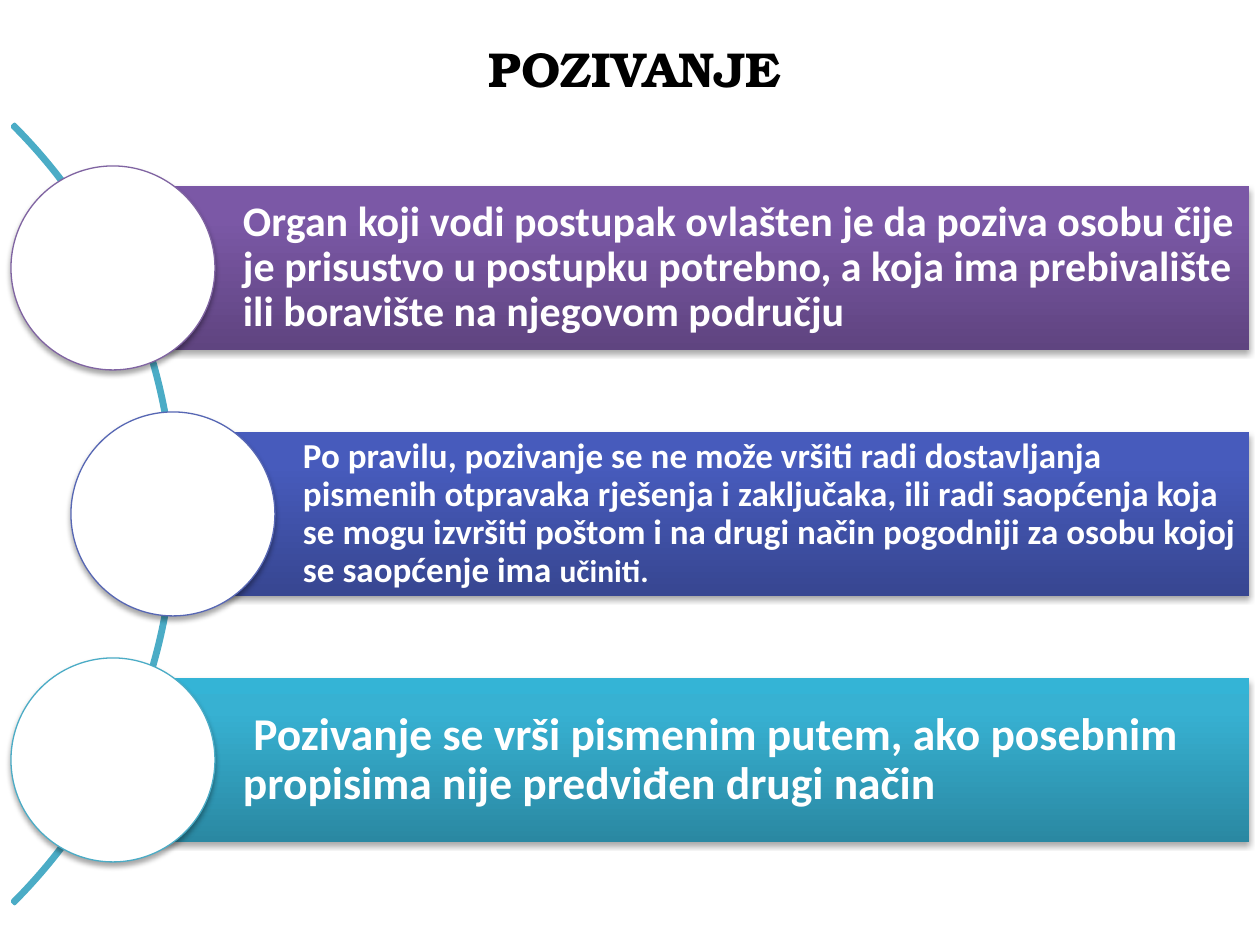
from dataclasses import dataclass

from lxml import etree
from pptx import Presentation
from pptx.dml.color import RGBColor
from pptx.enum.shapes import MSO_SHAPE
from pptx.enum.text import MSO_ANCHOR, PP_ALIGN
from pptx.oxml import parse_xml
from pptx.util import Emu, Pt

RECT, OVAL, BLOCK_ARC = MSO_SHAPE.RECTANGLE, MSO_SHAPE.OVAL, MSO_SHAPE.BLOCK_ARC
MIDDLE = MSO_ANCHOR.MIDDLE
LEFT, CENTER = PP_ALIGN.LEFT, PP_ALIGN.CENTER
NS = "http://schemas.openxmlformats.org/drawingml/2006/main"
EMU_PER_PX = 914400 / 126

SLIDE_W, SLIDE_H = 1260, 945
MID_Y, ROW_PITCH = 514, 246
BAR_RIGHT, BAR_H = 1249, 164
CIRCLE_D = 204
ARC_X, ARC_D = -926, 1102
TEXT_INDENT = 130


@dataclass(frozen=True)
class Theme:
    title_font: str = "TeX Gyre Bonum"
    body_font: str = "Calibri"
    title_size: int = 28
    black: str = "000000"
    white: str = "FFFFFF"
    arc: str = "4BACC6"
    # Gradient colours run from the bottom of a bar to its top.
    purple: tuple = ("5F4480", "7B58A6", "7C57A8")
    blue: tuple = ("374691", "475BBC", "455ABF")
    teal: tuple = ("2A88A2", "37B1D2", "34B4D6")
    outlines: tuple = ("8064A2", "5767B4", "4BACC6")


THEME = Theme()

# Centre x of the circle, bar gradient, outline, edge inset, (text, size) runs
ROWS = [
    (113, THEME.purple, THEME.outlines[0], 9, [
        ("Organ koji vodi postupak ovlašten je da poziva osobu čije je prisustvo "
         "u postupku potrebno, a koja ima prebivalište ili boravište na njegovom "
         "području", 24)]),
    (173, THEME.blue, THEME.outlines[1], 8, [
        ("Po pravilu, pozivanje se ne može vršiti radi dostavljanja pismenih "
         "otpravaka rješenja i zaključaka, ili radi saopćenja koja se mogu "
         "izvršiti poštom i na drugi način pogodniji za osobu kojoj se "
         "saopćenje ima ", 20),
        ("učiniti.", 18)]),
    (113, THEME.teal, THEME.outlines[2], 9, [
        (" Pozivanje se vrši pismenim putem, ako posebnim propisima nije "
         "predviđen drugi način", 26)]),
]


def px(n):
    return Emu(round(n * EMU_PER_PX))


def rgb(color):
    return RGBColor.from_string(color)


def write_text(s, runs, *, font, color, align=LEFT, spacing=1.0, insets=(0, 0, 0, 0)):
    """Fill s with one bold paragraph; insets are left, top, right, bottom in px."""
    tf = s.text_frame
    tf.word_wrap = True
    tf.vertical_anchor = MIDDLE
    tf.margin_left, tf.margin_top, tf.margin_right, tf.margin_bottom = map(px, insets)
    p = tf.paragraphs[0]
    p.alignment = align
    p.line_spacing = spacing
    for text, size in runs:
        r = p.add_run()
        r.text = text
        r.font.name = font
        r.font.size = Pt(size)
        r.font.bold = True
        r.font.color.rgb = rgb(color)


def add_shape(slide, kind, x, y, w, h, *, fill=None, line=None, line_width=0.75):
    s = slide.shapes.add_shape(kind, px(x), px(y), px(w), px(h))
    s.shadow.inherit = False
    if fill:
        s.fill.solid()
        s.fill.fore_color.rgb = rgb(fill)
    else:
        s.fill.background()
    if line:
        s.line.color.rgb = rgb(line)
        s.line.width = Pt(line_width)
    else:
        s.line.fill.background()
    return s


def set_gradient(s, colors):
    """Replace the empty fill of s with a vertical three-stop gradient."""
    stops = "".join(
        f'<a:gs pos="{pos * 1000}"><a:srgbClr val="{color}"/></a:gs>'
        for pos, color in zip((0, 80, 100), colors))
    grad = parse_xml(f'<a:gradFill xmlns:a="{NS}" rotWithShape="1"><a:gsLst>{stops}'
                     '</a:gsLst><a:lin ang="16200000" scaled="0"/></a:gradFill>')
    sp_pr = s._element.spPr
    sp_pr.replace(sp_pr.find(f"{{{NS}}}noFill"), grad)


def add_shadow(s):
    effects = s._element.spPr.find(f"{{{NS}}}effectLst")
    shadow = etree.SubElement(effects, f"{{{NS}}}outerShdw", blurRad=str(Pt(3.1)),
                              dist=str(Pt(1.8)), dir="5400000", rotWithShape="0")
    color = etree.SubElement(shadow, f"{{{NS}}}srgbClr", val=THEME.black)
    etree.SubElement(color, f"{{{NS}}}alpha", val="35000")


def add_title(slide, text):
    s = slide.shapes.add_textbox(px(63), px(10), px(1144), px(116))
    write_text(s, [(text, THEME.title_size)], font=THEME.title_font,
               color=THEME.black, align=CENTER)


def add_arc(slide):
    """Draw the right-hand quarter of a large circle as a thin block arc."""
    s = add_shape(slide, BLOCK_ARC, ARC_X, MID_Y - ARC_D / 2, ARC_D, ARC_D,
                  line=THEME.arc, line_width=2)
    for i, value in enumerate((189, 27, 0.003)):
        s.adjustments[i] = value


def add_row(slide, center_x, center_y, gradient, outline, inset, runs):
    bar = add_shape(slide, RECT, center_x, center_y - BAR_H / 2,
                    BAR_RIGHT - center_x, BAR_H)
    set_gradient(bar, gradient)
    add_shadow(bar)
    write_text(bar, runs, font=THEME.body_font, color=THEME.white, spacing=0.9,
               insets=(TEXT_INDENT, inset, inset, inset))
    circle = add_shape(slide, OVAL, center_x - CIRCLE_D / 2, center_y - CIRCLE_D / 2,
                       CIRCLE_D, CIRCLE_D, fill=THEME.white, line=outline)
    add_shadow(circle)


def main():
    prs = Presentation()
    prs.slide_width, prs.slide_height = px(SLIDE_W), px(SLIDE_H)
    slide = prs.slides.add_slide(prs.slide_layouts[6])
    add_title(slide, "POZIVANJE")
    add_arc(slide)
    for i, (center_x, *style) in enumerate(ROWS):
        add_row(slide, center_x, MID_Y + (i - 1) * ROW_PITCH, *style)
    prs.save("out.pptx")


if __name__ == "__main__":
    main()
